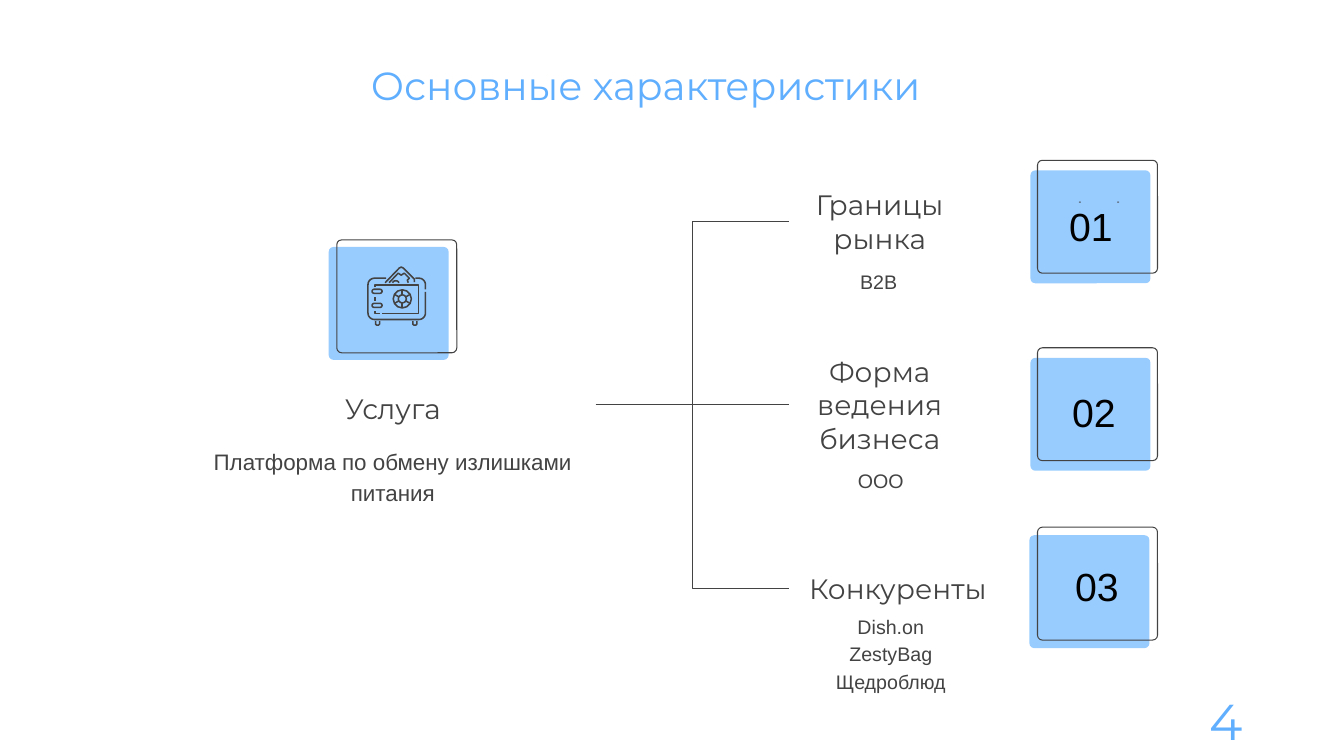
from math import cos, pi, sin

from pptx import Presentation
from pptx.dml.color import RGBColor
from pptx.enum.shapes import MSO_CONNECTOR, MSO_SHAPE
from pptx.enum.text import MSO_ANCHOR, PP_ALIGN
from pptx.oxml.ns import qn
from pptx.util import Inches, Pt

BLUE = RGBColor(0x60, 0xAE, 0xFE)
TILE_BLUE = RGBColor(0x98, 0xCB, 0xFE)
GRAY = RGBColor(0x43, 0x43, 0x43)
BLACK = RGBColor(0, 0, 0)

TITLE = {"name": "Montserrat", "size": Pt(28), "color": BLUE}
PAGE_NUMBER = TITLE | {"size": Pt(36)}
HEADING = {"name": "Montserrat", "size": Pt(20), "color": GRAY}
SERVICE_TEXT = {"name": "Arial", "size": Pt(16), "color": GRAY}
DETAIL = SERVICE_TEXT | {"size": Pt(14)}
NUMBER = {"name": "Arial", "size": Pt(28), "color": BLACK}

TILE_WIDTH, TILE_HEIGHT = 1.19, 1.12
HEADING_LEFT, HEADING_HEIGHT = 7.83, 0.59
TEXT_WIDTH, TEXT_HEIGHT = 4.09, 1.21

# heading, heading width, details, details place, tile place, frame shift, number place
FEATURES = [
    ("Границы рынка", 1.79, ["B2B"], (6.67, 2.54),
     (10.22, 1.69), (0.07, -0.1), (10.5, 1.96)),
    ("Форма ведения бизнеса", 1.79, ["ООО"], (6.69, 4.52),
     (10.22, 3.55), (0.07, -0.1), (10.53, 3.8)),
    ("Конкуренты", 2.15, ["Dish.on", "ZestyBag", "Щедроблюд"], (6.79, 5.97),
     (10.21, 5.31), (0.08, -0.08), (10.56, 5.53)),
]


def add_text(page, box, lines, style, align=PP_ALIGN.CENTER, anchor=MSO_ANCHOR.TOP,
             spacing=None, wrap=True, inset=0.1):
    text_box = page.shapes.add_textbox(*map(Inches, box))
    frame = text_box.text_frame
    layout = {"word_wrap": wrap, "vertical_anchor": anchor,
              "margin_top": Inches(inset), "margin_bottom": Inches(inset)}
    for name, value in layout.items():
        setattr(frame, name, value)
    for index, line in enumerate(lines):
        para = frame.paragraphs[0] if index == 0 else frame.add_paragraph()
        para.alignment = align
        if spacing:
            para.line_spacing = spacing
        span = para.add_run()
        span.text = line
        for name, value in style.items():
            if name == "color":
                span.font.color.rgb = value
            else:
                setattr(span.font, name, value)
    return text_box


def paint(shape, fill=None, line=None, width=0.75):
    shape.shadow.inherit = False
    if fill is None:
        shape.fill.background()
    else:
        shape.fill.solid()
        shape.fill.fore_color.rgb = fill
    if line is None:
        shape.line.fill.background()
    else:
        shape.line.color.rgb = line
        shape.line.width = Pt(width)


def add_preset(page, kind, box, corner=None, **look):
    shape = page.shapes.add_shape(kind, *map(Inches, box))
    if corner is not None:
        shape.adjustments[0] = corner
    paint(shape, **look)


def add_tile(page, left, top, shift):
    """Blue tile with a thin frame moved by shift."""
    size = (TILE_WIDTH, TILE_HEIGHT)
    add_preset(page, MSO_SHAPE.ROUNDED_RECTANGLE, (left, top, *size), 0.043, fill=TILE_BLUE)
    frame = (left + shift[0], top + shift[1], *size)
    add_preset(page, MSO_SHAPE.ROUNDED_RECTANGLE, frame, 0.043, line=GRAY)


def add_outline(page, points):
    start, *rest = [(Inches(x), Inches(y)) for x, y in points]
    builder = page.shapes.build_freeform(*start, scale=1.0)
    builder.add_line_segments(rest, close=False)
    paint(builder.convert_to_shape(), line=GRAY, width=1.1)


def around(x, y, radius, start, end, steps=8):
    """Points of an arc, angles in degrees, clockwise from the right."""
    angles = [(start + (end - start) * step / steps) * pi / 180 for step in range(steps + 1)]
    return [(x + radius * cos(angle), y + radius * sin(angle)) for angle in angles]


def draw_safe(page, left, top):
    """Safe with a banknote on top, in a box of 0.59 by 0.59."""
    near, far, low, high, radius = 0.075, 0.515, 0.465, 0.185, 0.065
    body = [(0.19, 0.12)]
    body += around(near, high, radius, 270, 180) + around(near, low, radius, 180, 90)
    body += around(far, low, radius, 90, 0) + [(0.58, 0.255)]
    corner = [(0.48, 0.12)] + around(far, high, radius, 270, 360) + [(0.58, 0.23)]
    door = [(0.08, 0.21), (0.08, 0.19), (0.51, 0.19), (0.51, 0.47), (0.15, 0.47)]
    note = [(0.18, 0.165), (0.32, 0.02), (0.34, 0.01), (0.36, 0.02), (0.47, 0.13), (0.47, 0.16)]
    inner_note = [(0.22, 0.165), (0.31, 0.07), (0.34, 0.09), (0.37, 0.07), (0.42, 0.12),
                  (0.4, 0.14), (0.41, 0.165)]
    coin = around(0.285, 0.18, 0.035, 205, 335)
    hinge_gap = [(0.08, 0.31), (0.08, 0.35)]
    door_foot = [(0.08, 0.45), (0.08, 0.47), (0.13, 0.47)]
    feet = [[(x, 0.545), (x, 0.575), (x + 0.01, 0.585), (x + 0.03, 0.585),
             (x + 0.04, 0.575), (x + 0.04, 0.545)] for x in (0.085, 0.455)]
    dial_x, dial_y = 0.35, 0.325
    spokes = [around(dial_x, dial_y, 0.04, angle, angle, 1)[:1]
              + around(dial_x, dial_y, 0.085, angle, angle, 1)[:1]
              for angle in range(30, 390, 60)]
    for points in [body, corner, door, note, inner_note, coin, hinge_gap, door_foot,
                   *feet, *spokes]:
        add_outline(page, [(left + x, top + y) for x, y in points])
    for y in (0.23, 0.37):
        add_preset(page, MSO_SHAPE.ROUNDED_RECTANGLE, (left + 0.05, top + y, 0.1, 0.04),
                   0.5, line=GRAY, width=1.1)
    for radius in (0.09, 0.04):
        add_preset(page, MSO_SHAPE.OVAL,
                   (left + dial_x - radius, top + dial_y - radius, 2 * radius, 2 * radius),
                   line=GRAY, width=1.1)


def add_service(page, left, top):
    add_tile(page, left + 1.41, top + 0.07, (0.08, -0.07))
    draw_safe(page, left + 1.79, top + 0.26)
    add_text(page, (left, top + 1.28, TEXT_WIDTH, 0.66), ["Услуга"], HEADING,
             anchor=MSO_ANCHOR.BOTTOM)
    add_text(page, (left, top + 1.93, TEXT_WIDTH, TEXT_HEIGHT),
             ["Платформа по обмену излишками питания"], SERVICE_TEXT, spacing=1.15)


def add_branch(page, start, heading, kind):
    x, y = map(Inches, start)
    branch = page.shapes.add_connector(kind, x, y, heading.left,
                                       heading.top + heading.height // 2)
    branch.end_connect(heading, 1)
    branch.line.color.rgb = GRAY
    branch.line.width = Pt(0.75)
    properties = branch._element.spPr
    properties.append(properties.makeelement(qn("a:effectLst"), {}))


def add_features(page, top, pitch):
    trunk = (5.91, top + pitch + HEADING_HEIGHT / 2)
    for index, feature in enumerate(FEATURES):
        heading, width, details, details_place, tile_place, shift, number_place = feature
        label = add_text(page, (HEADING_LEFT, top + index * pitch, width, HEADING_HEIGHT),
                         [heading], HEADING, anchor=MSO_ANCHOR.MIDDLE)
        kind = MSO_CONNECTOR.STRAIGHT if index == 1 else MSO_CONNECTOR.ELBOW
        add_branch(page, trunk, label, kind)
        add_tile(page, *tile_place, shift)
        add_text(page, (*number_place, 0.64, 0.57), [f"{index + 1:02}"], NUMBER,
                 wrap=False, inset=0.05)
        add_text(page, (*details_place, TEXT_WIDTH, TEXT_HEIGHT), details, DETAIL, spacing=1.15)
    for x in (10.7, 11.08):
        add_preset(page, MSO_SHAPE.OVAL, (x, 2, 0.02, 0.01), fill=GRAY)


def main():
    deck = Presentation()
    deck.slide_width, deck.slide_height = Inches(13.33), Inches(7.5)
    page = deck.slides.add_slide(deck.slide_layouts[6])
    add_text(page, (3.58, 0.56, 6.17, 0.57), ["Основные характеристики"], TITLE,
             align=PP_ALIGN.LEFT, inset=0.05)
    add_service(page, 1.85, 2.38)
    add_features(page, 1.9, 1.82)
    add_text(page, (9.42, 6.95, 3, 0.4), ["4"], PAGE_NUMBER, align=PP_ALIGN.RIGHT,
             anchor=MSO_ANCHOR.MIDDLE, inset=0.05)
    deck.save("out.pptx")


if __name__ == "__main__":
    main()
